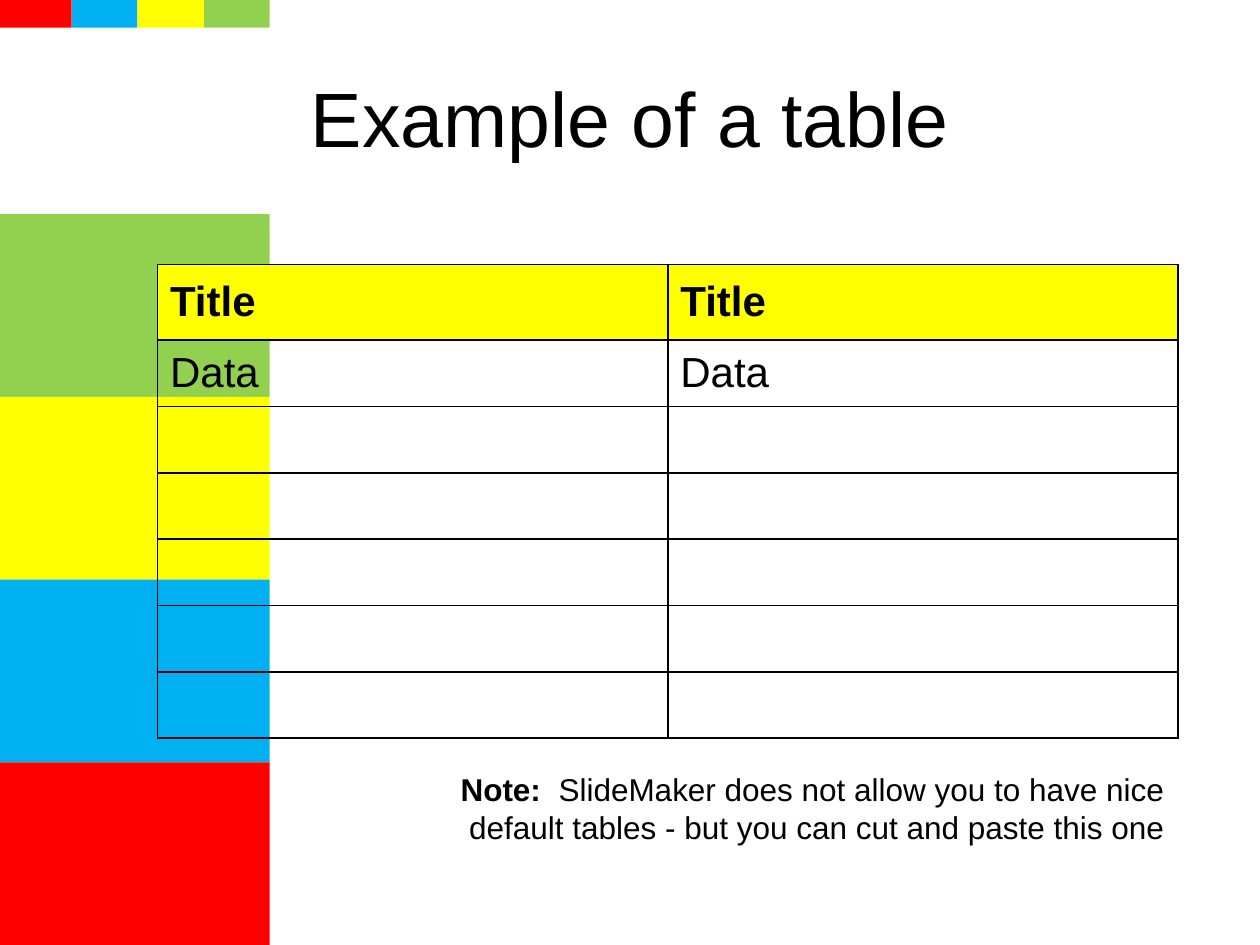
import lxml.etree
import pptx
import pptx.dml.color
import pptx.enum.shapes
import pptx.enum.text
import pptx.oxml.ns
import pptx.util

Inches = pptx.util.Inches
Align = pptx.enum.text.PP_ALIGN
Anchor = pptx.enum.text.MSO_ANCHOR

BLACK, RED, BLUE, YELLOW, GREEN = "000000", "FF0000", "00B0F0", "FFFF00", "92D050"
SIDE_WIDTH = 2.14
TABLE_ROWS = [["Title", "Title"], ["Data", "Data"]] + [["", ""]] * 5


def color(value):
    return pptx.dml.color.RGBColor.from_string(value)


def add_span(para, text, size, bold=False):
    span = para.add_run()
    span.text = text
    formats = {"name": "Arial", "size": pptx.util.Pt(size), "bold": bold}
    for name, value in formats.items():
        setattr(span.font, name, value)
    span.font.color.rgb = color(BLACK)


def add_block(page, left, top, width, height, fill):
    block = page.shapes.add_shape(
        pptx.enum.shapes.MSO_SHAPE.RECTANGLE,
        Inches(left), Inches(top), Inches(width), Inches(height))
    block.shadow.inherit = False
    block.fill.solid()
    block.fill.fore_color.rgb = color(fill)
    block.line.fill.background()


def add_decoration(page):
    # Large blocks down the left side
    for index, fill in enumerate([GREEN, YELLOW, BLUE, RED]):
        add_block(page, 0, 1.7 + 1.45 * index, SIDE_WIDTH, 1.45, fill)
    # Small strip along the top
    edges = [0, 0.57, 1.09, 1.62, SIDE_WIDTH]
    for left, right, fill in zip(edges, edges[1:], [RED, BLUE, YELLOW, GREEN]):
        add_block(page, left, 0, right - left, 0.22, fill)


def set_title(page, text):
    title = page.shapes.title
    places = {"left": 0.5, "top": 0.3, "width": 9, "height": 1.25}
    for name, value in places.items():
        setattr(title, name, Inches(value))
    title.text_frame.vertical_anchor = Anchor.MIDDLE
    para = title.text_frame.paragraphs[0]
    para.alignment = Align.CENTER
    add_span(para, text, 44)


def set_borders(cell):
    properties = cell._tc.get_or_add_tcPr()
    qn = pptx.oxml.ns.qn
    for side in ("a:lnL", "a:lnR", "a:lnT", "a:lnB"):
        line = lxml.etree.SubElement(properties, qn(side), w=str(pptx.util.Pt(1)))
        fill = lxml.etree.SubElement(line, qn("a:solidFill"))
        lxml.etree.SubElement(fill, qn("a:srgbClr"), val=BLACK)


def add_data_table(page, rows):
    width, height, header_height = 8.1, 3.76, 0.6
    table = page.shapes.add_table(
        len(rows), len(rows[0]), Inches(1.25), Inches(2.1),
        Inches(width), Inches(height)).table
    table.first_row = table.horz_banding = False
    for column in table.columns:
        column.width = Inches(width / len(rows[0]))
    row_height = (height - header_height) / (len(rows) - 1)
    for row_index, texts in enumerate(rows):
        is_header = row_index == 0
        table.rows[row_index].height = Inches(header_height if is_header else row_height)
        for column_index, text in enumerate(texts):
            cell = table.cell(row_index, column_index)
            set_borders(cell)
            if is_header:
                cell.fill.solid()
                cell.fill.fore_color.rgb = color(YELLOW)
            else:
                cell.fill.background()
            cell.vertical_anchor = Anchor.MIDDLE
            if text:
                add_span(cell.text_frame.paragraphs[0], text, 24, is_header)


def add_note(page, label, text):
    box = page.shapes.add_textbox(Inches(2.88), Inches(6.06), Inches(6.46), Inches(0.71))
    box.text_frame.word_wrap = True
    box.text_frame.auto_size = pptx.enum.text.MSO_AUTO_SIZE.SHAPE_TO_FIT_TEXT
    para = box.text_frame.paragraphs[0]
    para.alignment = Align.RIGHT
    add_span(para, label, 18, True)
    add_span(para, text, 18)


def main():
    deck = pptx.Presentation()
    deck.slide_width, deck.slide_height = Inches(10), Inches(7.5)
    page = deck.slides.add_slide(deck.slide_layouts.get_by_name("Title Only"))
    add_decoration(page)
    set_title(page, "Example of a table")
    add_data_table(page, TABLE_ROWS)
    add_note(page, "Note:  ", "SlideMaker does not allow you to have nice "
             "default tables - but you can cut and paste this one")
    deck.save("out.pptx")


if __name__ == "__main__":
    main()
